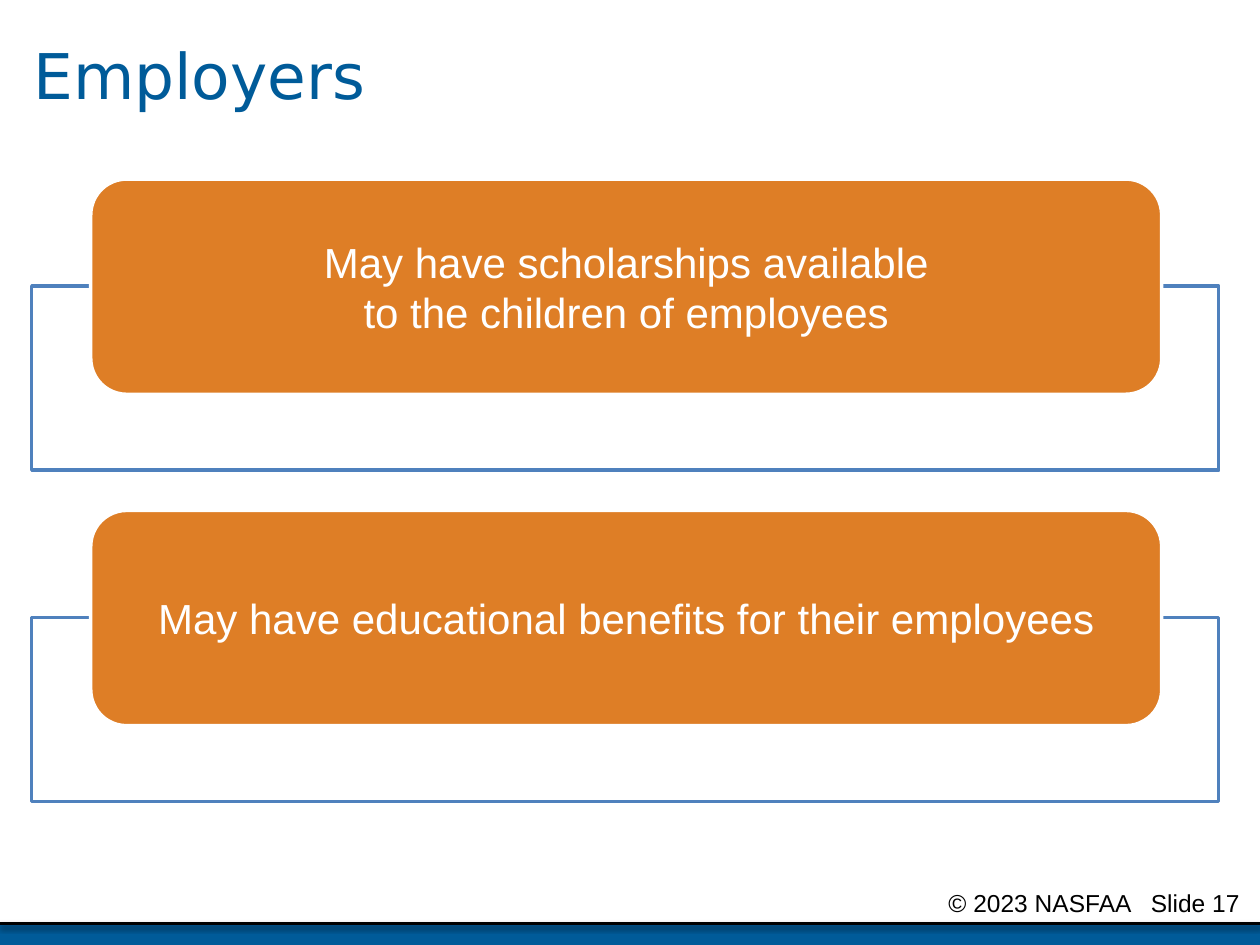
from lxml import etree
from pptx import Presentation
from pptx.dml.color import RGBColor
from pptx.enum.shapes import MSO_CONNECTOR, MSO_SHAPE
from pptx.enum.text import MSO_ANCHOR, PP_ALIGN
from pptx.oxml import parse_xml
from pptx.oxml.ns import nsdecls, qn
from pptx.util import Cm, Pt

COLORS = {"blue": "005B99", "outline": "4F81BD", "orange": "DE7E26",
          "white": "FFFFFF", "black": "000000"}
WIDTH, HEIGHT = 25.4, 19.05


def rgb(name):
    return RGBColor.from_string(COLORS[name])


def add_box(slide, kind, x, y, w, h, fill, line=None):
    sp = slide.shapes.add_shape(kind, Cm(x), Cm(y), Cm(w), Cm(h))
    sp.shadow.inherit = False
    sp.fill.solid()
    sp.fill.fore_color.rgb = rgb(fill)
    if line:
        sp.line.color.rgb = rgb(line)
        sp.line.width = Pt(2)
    else:
        sp.line.fill.background()
    return sp


def add_run(p, text, size, color, font="Arial"):
    r = p.add_run()
    r.text = text
    r.font.size = Pt(size)
    r.font.name = font
    r.font.color.rgb = rgb(color)


def set_margins(tf, left, top, right, bottom):
    tf.margin_left, tf.margin_top = Cm(left), Cm(top)
    tf.margin_right, tf.margin_bottom = Cm(right), Cm(bottom)


def add_title(slide, x, y, w, h, text):
    title = slide.shapes.title
    title.left, title.top, title.width, title.height = Cm(x), Cm(y), Cm(w), Cm(h)
    tf = title.text_frame
    tf.vertical_anchor = MSO_ANCHOR.MIDDLE
    p = tf.paragraphs[0]
    p.alignment = PP_ALIGN.LEFT
    p.line_spacing = 0.9
    add_run(p, text, 36, "blue", "DejaVu Sans")


def add_item(slide, x, y, w, lines):
    # Open frame behind the label
    frame = add_box(slide, MSO_SHAPE.RECTANGLE, x, y + 2.16, w, 3.71,
                    "white", "outline")
    color = frame.fill._xPr.find(qn("a:solidFill"))[0]
    etree.SubElement(color, qn("a:alpha"), val="90000")

    # Rounded label
    label = add_box(slide, MSO_SHAPE.ROUNDED_RECTANGLE, x + 1.19, y, w - 2.34,
                    4.34, "orange", "white")
    tf = label.text_frame
    tf.word_wrap = True
    tf.vertical_anchor = MSO_ANCHOR.MIDDLE
    set_margins(tf, 0.85, 0, 0.85, 0)
    p = tf.paragraphs[0]
    p.alignment = PP_ALIGN.CENTER
    for i, line in enumerate(lines):
        if i:
            p.add_line_break()
        add_run(p, line, 24, "white")


def add_footer(slide, x, y, w, h):
    # Blue band with a shadowed rule on its top edge
    add_box(slide, MSO_SHAPE.RECTANGLE, x, y + 0.84, w, h - 0.84, "blue")
    rule = slide.shapes.add_connector(MSO_CONNECTOR.STRAIGHT, Cm(x), Cm(y + 0.84),
                                      Cm(x + w), Cm(y + 0.84))
    rule.line.color.rgb = rgb("black")
    rule.line.width = Pt(2)
    rule._element.spPr.append(parse_xml(
        f'<a:effectLst {nsdecls("a")}>'
        f'<a:outerShdw blurRad="{Pt(3.1)}" dist="{Pt(1.6)}" dir="5400000" rotWithShape="0">'
        '<a:srgbClr val="000000"><a:alpha val="38000"/></a:srgbClr>'
        '</a:outerShdw></a:effectLst>'))

    # Copyright and slide number, parted by a tab stop
    box = slide.shapes.add_textbox(Cm(x + 15.88), Cm(y), Cm(w - 15.88), Cm(0.64))
    tf = box.text_frame
    tf.word_wrap = True
    set_margins(tf, 3.24, 0.13, 0, 0.13)
    p = tf.paragraphs[0]
    tabs = etree.SubElement(p._p.get_or_add_pPr(), qn("a:tabLst"))
    etree.SubElement(tabs, qn("a:tab"), pos=str(Cm(4.08)), algn="l")
    add_run(p, "© 2023 NASFAA\tSlide 17", 14, "black")


def main():
    prs = Presentation()
    prs.slide_width, prs.slide_height = Cm(WIDTH), Cm(HEIGHT)
    s = prs.slides.add_slide(prs.slide_layouts[5])

    add_footer(s, 0, 17.78, WIDTH, HEIGHT - 17.78)
    add_title(s, 0.42, 0, 24.56, 3.18, "Employers")
    items = [["May have scholarships available", "to the children of employees"],
             ["May have educational benefits for their employees"]]
    for i, lines in enumerate(items):
        add_item(s, 0.64, 3.61 + i * 6.68, 23.93, lines)

    prs.save("out.pptx")


if __name__ == "__main__":
    main()
